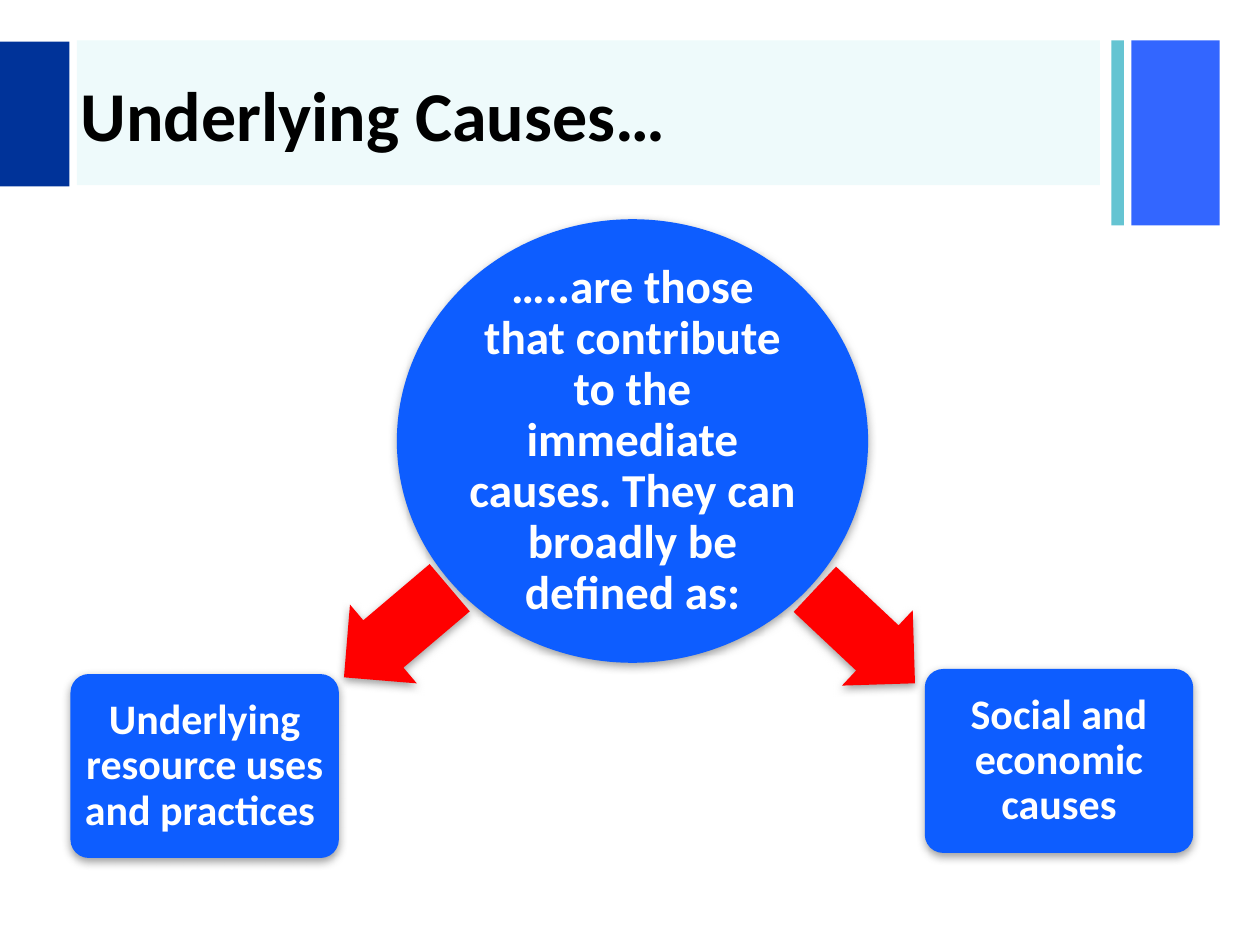
from pptx import Presentation
from pptx.dml.color import RGBColor
from pptx.enum.shapes import MSO_SHAPE
from pptx.enum.text import MSO_ANCHOR, MSO_AUTO_SIZE, PP_ALIGN
from pptx.oxml import parse_xml
from pptx.oxml.ns import nsdecls, qn
from pptx.util import Inches, Pt

RECT, OVAL = MSO_SHAPE.RECTANGLE, MSO_SHAPE.OVAL
ROUND, ARROW = MSO_SHAPE.ROUNDED_RECTANGLE, MSO_SHAPE.LEFT_ARROW
MIDDLE, FIXED = MSO_ANCHOR.MIDDLE, MSO_AUTO_SIZE.NONE
LEFT, CENTER = PP_ALIGN.LEFT, PP_ALIGN.CENTER
FONT = "Calibri"
BLUE, RED, WHITE, BLACK = "0D5DFF", "FF0000", "FFFFFF", "000000"


def rgb(code):
    """Turn a hex string into a colour."""
    return RGBColor.from_string(code)


def add_block(slide, kind, box, color):
    """Add a plain filled shape in the given box."""
    block = slide.shapes.add_shape(kind, *map(Inches, box))
    block.fill.solid()
    block.fill.fore_color.rgb = rgb(color)
    block.line.fill.background()
    block.shadow.inherit = False
    return block


def add_shade(block):
    """Give a shape a soft grey shadow below it."""
    effects = block._element.spPr.find(qn("a:effectLst"))
    effects.append(parse_xml(
        f'<a:outerShdw {nsdecls("a")} blurRad="{Pt(5)}" dist="{Pt(2)}" '
        'dir="5400000" rotWithShape="0"><a:srgbClr val="808080">'
        '<a:alpha val="75000"/></a:srgbClr></a:outerShdw>'))


def write(shape, text, size, color, align):
    """Put one bold, vertically centred paragraph in a shape."""
    frame = shape.text_frame
    frame.text = text
    frame.word_wrap = True
    frame.auto_size = FIXED
    frame.vertical_anchor = MIDDLE
    para = frame.paragraphs[0]
    para.alignment = align
    font = para.runs[0].font
    font.name, font.size, font.bold = FONT, Pt(size), True
    font.color.rgb = rgb(color)


def add_header(slide, text, box):
    """Place the colour bars and the title across the header box."""
    left, top, width, height = box
    tall = 1.47
    right = left + width
    add_block(slide, RECT, (right - 0.7, top, 0.7, tall), "3366FF")
    add_block(slide, RECT, (right - 0.86, top, 0.1, tall), "65C4D2")
    band = add_block(slide, RECT, (left + 0.61, top, 8.12, height), "14C5D0")
    tint = band._element.spPr.find(".//" + qn("a:srgbClr"))
    tint.append(parse_xml(f'<a:alpha {nsdecls("a")} val="7000"/>'))
    add_block(slide, RECT, (left, top + 0.01, 0.55, height), "003399")
    title = slide.shapes.title
    title.left, title.top = Inches(left + 0.54), Inches(top + 0.02)
    title.width, title.height = Inches(8.27), Inches(1.12)
    write(title, text, 40, BLACK, LEFT)
    slide.shapes._spTree.append(title._element)


def add_node(slide, kind, box, text, size, inset):
    """Place a blue node with white text in the given box."""
    node = add_block(slide, kind, box, BLUE)
    if kind == ROUND:
        node.adjustments[0] = 0.1
    add_shade(node)
    write(node, text, size, WHITE, CENTER)
    frame = node.text_frame
    frame.margin_left = frame.margin_right = Inches(inset)
    frame.margin_top = frame.margin_bottom = Inches(inset)
    frame.paragraphs[0].line_spacing = 0.9


def add_arrow(slide, box, angle):
    """Place a red arrow in the given box, turned by the angle."""
    arrow = add_block(slide, ARROW, box, RED)
    arrow.adjustments[0], arrow.adjustments[1] = 0.6, 0.5
    arrow.rotation = angle
    add_shade(arrow)


def add_causes(slide, box):
    """Place the circle, and the two causes it leads to, in the box."""
    left, top, width, height = box
    wide, high = 2.13, 1.46
    low = top + height - high
    add_node(slide, OVAL, (left + 2.59, top, 3.74, 3.52),
             "…..are those that contribute to the immediate causes. "
             "They can broadly be defined as:", 27, 0.02)
    add_arrow(slide, (left + 2.04, top + 2.87, 1.1, 0.82), 319.7)
    add_node(slide, ROUND, (left, low, wide, high),
             "Underlying resource uses and practices ", 24, 0.05)
    add_arrow(slide, (left + 5.76, top + 2.9, 1.09, 0.82), 223.2)
    add_node(slide, ROUND, (left + width - wide, low - 0.04, wide, high),
             "Social and economic causes", 24, 0.05)


def main():
    """Build the slide and save it."""
    deck = Presentation()
    deck.slide_width, deck.slide_height = Inches(10), Inches(7.5)
    slide = deck.slides.add_slide(deck.slide_layouts[5])
    add_header(slide, "Underlying Causes…", (0, 0.32, 9.68, 1.15))
    add_causes(slide, (0.56, 1.74, 8.91, 5.07))
    deck.save("out.pptx")


if __name__ == "__main__":
    main()
